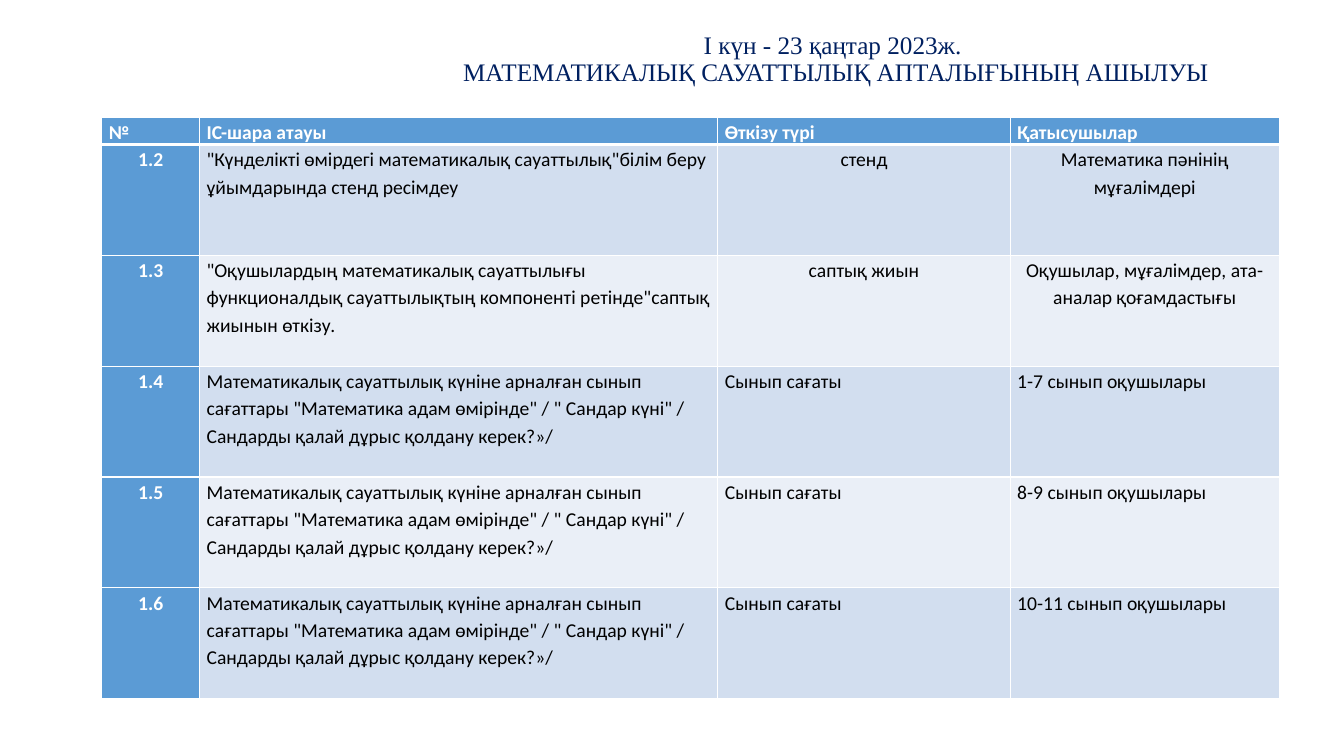
from copy import deepcopy

from lxml.etree import SubElement
from pptx import Presentation
from pptx.dml.color import RGBColor
from pptx.enum.text import MSO_ANCHOR, PP_ALIGN
from pptx.oxml.ns import qn
from pptx.util import Inches, Pt

HEADING = "І күн - 23 қаңтар 2023ж. \vМАТЕМАТИКАЛЫҚ САУАТТЫЛЫҚ АПТАЛЫҒЫНЫҢ АШЫЛУЫ"
HEADER = ("№", "ІС-шара атауы", "Өткізу түрі", "Қатысушылар")
CLASS_HOUR = (
    'Математикалық сауаттылық күніне арналған сынып сағаттары "Математика адам өмірінде" '
    '/ " Сандар күні" / Сандарды қалай дұрыс қолдану керек?»/',
    "Сынып сағаты",
)
EVENTS = [
    ("1.2", '"Күнделікті өмірдегі математикалық сауаттылық"білім беру ұйымдарында стенд ресімдеу',
     "стенд", "Математика пәнінің мұғалімдері"),
    ("1.3", '"Оқушылардың математикалық сауаттылығы функционалдық сауаттылықтың '
     'компоненті ретінде"саптық жиынын өткізу.',
     "саптық жиын", "Оқушылар, мұғалімдер, ата-аналар қоғамдастығы"),
    ("1.4", *CLASS_HOUR, "1-7 сынып оқушылары"),
    ("1.5", *CLASS_HOUR, "8-9 сынып оқушылары"),
    ("1.6", *CLASS_HOUR, "10-11 сынып оқушылары"),
]
COLUMN_WIDTHS = (0.97, 5.14, 2.9, 2.67)
HEADER_HEIGHT, EVENT_HEIGHT = 0.26, 1.1
CENTERED_EVENTS = 2
NAVY, BLUE, WHITE, BLACK = "002060", "5B9BD5", "FFFFFF", "000000"
BANDS = ("D2DEEF", "EAEFF7")


def color(value):
    return RGBColor.from_string(value)


def write(frame, text, *, size, font, fill, bold=False, align=PP_ALIGN.LEFT, spacing=1.0):
    paragraph = frame.paragraphs[0]
    paragraph.text = text
    paragraph.alignment = align
    paragraph.line_spacing = spacing
    for run in paragraph.runs:
        run.font.size = Pt(size)
        run.font.name = font
        run.font.bold = bold
        run.font.color.rgb = color(fill)
    for line_break in frame._txBody.iter(qn("a:br")):
        line_break.append(deepcopy(paragraph.runs[0].font._element))


def add_borders(cell, bottom):
    properties = cell._tc.get_or_add_tcPr()
    for side, width in (("lnL", 1), ("lnR", 1), ("lnT", 1), ("lnB", bottom)):
        border = SubElement(properties, qn(f"a:{side}"), w=str(Pt(width)))
        fill = SubElement(border, qn("a:solidFill"))
        SubElement(fill, qn("a:srgbClr"), val=WHITE)


def fill_cell(cell, text, background, *, bottom=1, **text_format):
    cell.margin_left = cell.margin_right = Inches(0.07)
    cell.margin_top = cell.margin_bottom = 0
    add_borders(cell, bottom)
    cell.fill.solid()
    cell.fill.fore_color.rgb = color(background)
    write(cell.text_frame, text, size=14, font="Calibri", spacing=1.15, **text_format)


def event_align(event_index, column):
    centered = column == 0 or (column > 1 and event_index < CENTERED_EVENTS)
    return PP_ALIGN.CENTER if centered else PP_ALIGN.LEFT


def main():
    deck = Presentation()
    deck.slide_width, deck.slide_height = Inches(13.33), Inches(7.5)
    slide = deck.slides.add_slide(deck.slide_layouts[5])

    heading = slide.shapes.title
    heading.left, heading.top = Inches(3.55), Inches(0.27)
    heading.width, heading.height = Inches(9.48), Inches(0.64)
    heading.text_frame.vertical_anchor = MSO_ANCHOR.MIDDLE
    write(heading.text_frame, HEADING, size=18, font="Times New Roman", fill=NAVY,
          align=PP_ALIGN.CENTER, spacing=0.9)

    row_heights = [HEADER_HEIGHT] + [EVENT_HEIGHT] * len(EVENTS)
    schedule = slide.shapes.add_table(
        len(row_heights), len(HEADER), Inches(1.01), Inches(1.16),
        Inches(sum(COLUMN_WIDTHS)), Inches(sum(row_heights))).table
    schedule.first_col = True
    for column, width in zip(schedule.columns, COLUMN_WIDTHS):
        column.width = Inches(width)
    for row, height in zip(schedule.rows, row_heights):
        row.height = Inches(height)

    for column, label in enumerate(HEADER):
        fill_cell(schedule.cell(0, column), label, BLUE, bottom=3, fill=WHITE, bold=True,
                  align=PP_ALIGN.JUSTIFY)
    for index, event in enumerate(EVENTS):
        for column, text in enumerate(event):
            numbered = column == 0
            fill_cell(schedule.cell(index + 1, column), text,
                      BLUE if numbered else BANDS[index % 2],
                      fill=WHITE if numbered else BLACK, bold=numbered,
                      align=event_align(index, column))

    deck.save("out.pptx")


if __name__ == "__main__":
    main()
